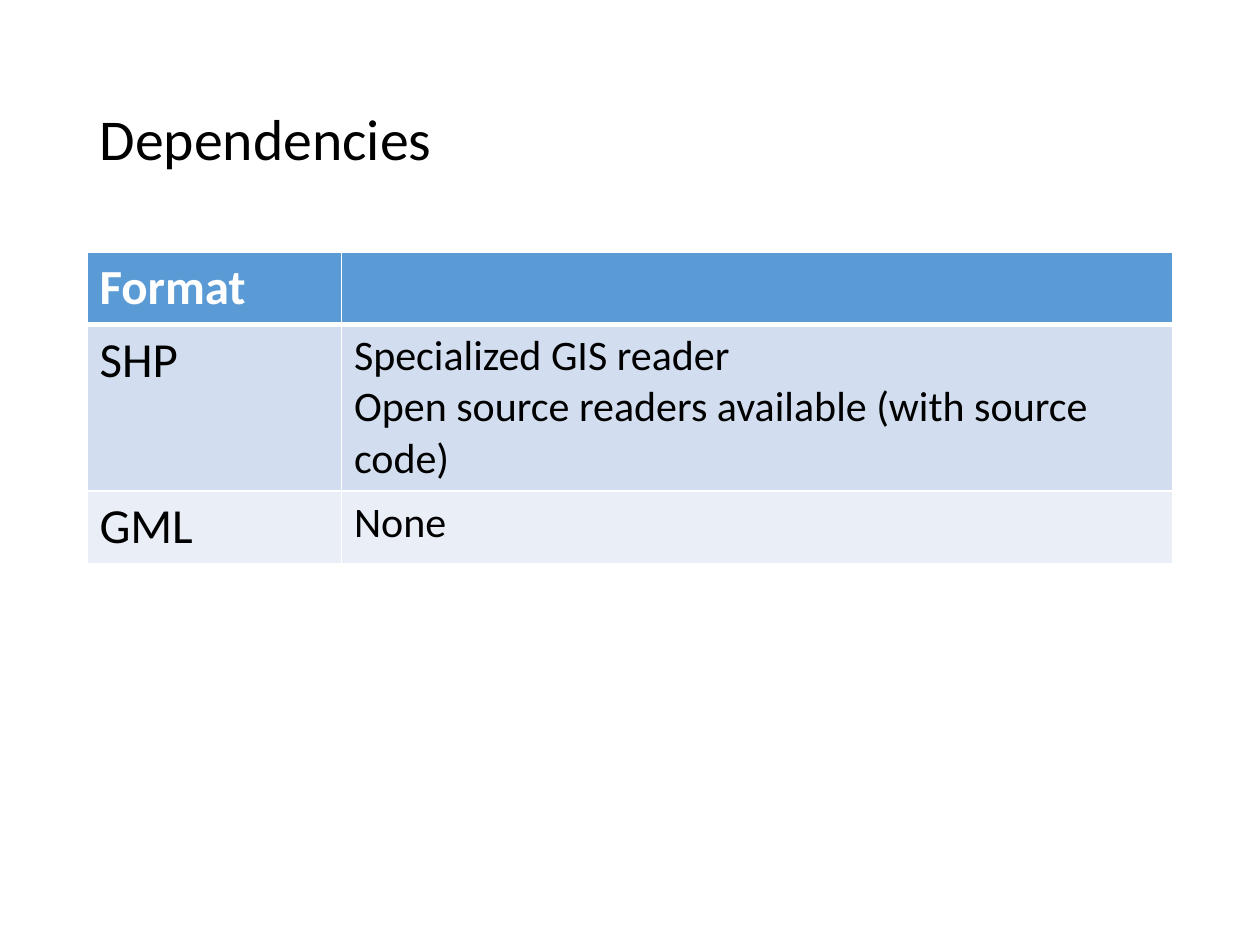
from lxml import etree
from pptx import Presentation
from pptx import util as u
from pptx.dml.color import RGBColor
from pptx.enum import text
from pptx.oxml import ns

COLORS = {
    "text": "000000",
    "white": "FFFFFF",
    "header": "5B9BD5",
    "odd_row": "D2DEEF",
    "even_row": "EAEFF7",
}
ROWS = [
    ("Format", ""),
    ("SHP", "Specialized GIS reader\nOpen source readers available (with source code)"),
    ("GML", "None"),
]
ROW_FILLS = ["header", "odd_row", "even_row"]
ROW_HEIGHTS = [0.57, 1.31, 0.57]
COLUMN_WIDTHS = [2.02, 6.6]
COLUMN_SIZES = [28, 24]


def write_text(frame, content, size, color="text", bold=False, line_spacing=None):
    frame.text = content
    for para in frame.paragraphs:
        para.alignment = text.PP_ALIGN.LEFT
        if line_spacing:
            para.line_spacing = line_spacing
        para.font.size = u.Pt(size)
        for span in para.runs:
            span.font.name = "Calibri"
            span.font.size = u.Pt(size)
            span.font.bold = bold
            span.font.color.rgb = RGBColor.from_string(COLORS[color])


def set_borders(cell, **widths):
    properties = cell._tc.get_or_add_tcPr()
    for side in "LRTB":
        line = etree.SubElement(properties, ns.qn(f"a:ln{side}"),
                                w=str(u.Pt(widths.get(side, 1))))
        fill = etree.SubElement(line, ns.qn("a:solidFill"))
        etree.SubElement(fill, ns.qn("a:srgbClr"), val=COLORS["white"])


def place_title(page, left, top, width, height):
    title = page.shapes.title
    title.left, title.top, title.width, title.height = map(
        u.Inches, (left, top, width, height))
    title.text_frame.vertical_anchor = text.MSO_ANCHOR.MIDDLE
    write_text(title.text_frame, "Dependencies", size=33, line_spacing=0.9)


def place_table(page, left, top, width, height):
    table = page.shapes.add_table(
        len(ROWS), len(COLUMN_WIDTHS),
        *map(u.Inches, (left, top, width, height))).table
    for column, column_width in zip(table.columns, COLUMN_WIDTHS):
        column.width = u.Inches(column_width)
    for r, contents in enumerate(ROWS):
        table.rows[r].height = u.Inches(ROW_HEIGHTS[r])
        header = r == 0
        for c, content in enumerate(contents):
            cell = table.cell(r, c)
            # The thick rule lies between the header and the first row
            set_borders(cell, B=3 if header else 1, T=3 if r == 1 else 1)
            cell.fill.solid()
            cell.fill.fore_color.rgb = RGBColor.from_string(COLORS[ROW_FILLS[r]])
            write_text(cell.text_frame, content, size=COLUMN_SIZES[c],
                       color="white" if header else "text", bold=header)


def main():
    deck = Presentation()
    deck.slide_width, deck.slide_height = u.Inches(10), u.Inches(7.5)
    page = deck.slides.add_slide(deck.slide_layouts.get_by_name("Title Only"))

    # Title above the table of formats, on a shared left edge
    left, width = 0.69, sum(COLUMN_WIDTHS)
    place_title(page, left, 0.4, width, 1.45)
    place_table(page, left, 2, width, sum(ROW_HEIGHTS))
    deck.save("out.pptx")


if __name__ == "__main__":
    main()
